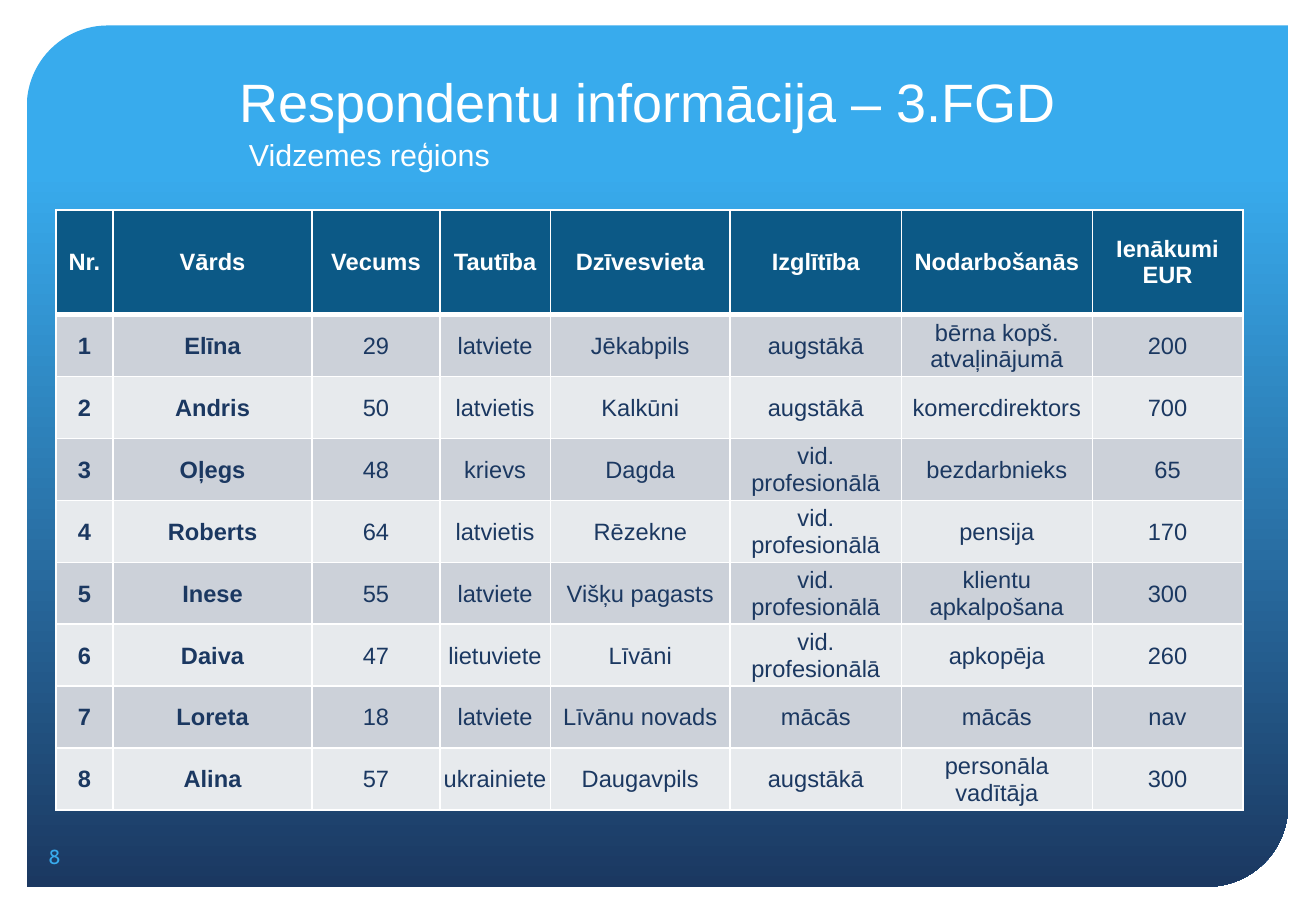
from lxml import etree
from pptx import Presentation
from pptx import util as u
from pptx.dml.color import RGBColor
from pptx.enum import shapes, text
from pptx.oxml import ns

WHITE = RGBColor(0xFF, 0xFF, 0xFF)
SKY = RGBColor(0x38, 0xAB, 0xED)
NAVY = RGBColor(0x1B, 0x38, 0x61)
HEADER = RGBColor(0x0C, 0x59, 0x86)
BANDS = (RGBColor(0xE7, 0xEA, 0xED), RGBColor(0xCC, 0xD1, 0xD9))

COL_WIDTHS = (0.47, 1.64, 1.05, 0.91, 1.48, 1.41, 1.57, 1.24)
HEADER_HEIGHT, ROW_HEIGHT = 0.86, 0.51
RESPONDENTS = (
    ("Nr.", "Vārds", "Vecums", "Tautība", "Dzīvesvieta", "Izglītība", "Nodarbošanās", "Ienākumi EUR"),
    ("1", "Elīna", "29", "latviete", "Jēkabpils", "augstākā", "bērna kopš. atvaļinājumā", "200"),
    ("2", "Andris", "50", "latvietis", "Kalkūni", "augstākā", "komercdirektors", "700"),
    ("3", "Oļegs", "48", "krievs", "Dagda", "vid. profesionālā", "bezdarbnieks", "65"),
    ("4", "Roberts", "64", "latvietis", "Rēzekne", "vid. profesionālā", "pensija", "170"),
    ("5", "Inese", "55", "latviete", "Višķu pagasts", "vid. profesionālā", "klientu apkalpošana", "300"),
    ("6", "Daiva", "47", "lietuviete", "Līvāni", "vid. profesionālā", "apkopēja", "260"),
    ("7", "Loreta", "18", "latviete", "Līvānu novads", "mācās", "mācās", "nav"),
    ("8", "Alina", "57", "ukrainiete", "Daugavpils", "augstākā", "personāla vadītāja", "300"),
)


def write(tf, content, size=14, font="Arial", color=WHITE, bold=False, align=text.PP_ALIGN.LEFT):
    p = tf.paragraphs[0]
    p.alignment = align
    r = p.add_run()
    r.text = content
    r.font.size, r.font.name, r.font.bold = u.Pt(size), font, bold
    r.font.color.rgb = color


def add_borders(cell, **widths):
    tc_pr = cell._tc.get_or_add_tcPr()
    for side in "LRTB":
        ln = etree.SubElement(tc_pr, ns.qn(f"a:ln{side}"), w=str(u.Pt(widths.get(side, 1))))
        solid = etree.SubElement(ln, ns.qn("a:solidFill"))
        etree.SubElement(solid, ns.qn("a:srgbClr"), val=str(WHITE))


class SlideBuilder:
    """Hold the slide style and add each kind of element to the current slide."""

    def __init__(self, slide):
        self.s = slide

    def panel(self, *box):
        sp = self.s.shapes.add_shape(shapes.MSO_SHAPE.ROUND_2_DIAG_RECTANGLE, *map(u.Inches, box))
        sp.adjustments[0], sp.adjustments[1] = 0.094, 0
        sp.shadow.inherit = False
        sp.line.fill.background()
        sp.fill.gradient()
        sp.fill.gradient_angle = 270
        for stop, position, color in zip(sp.fill.gradient_stops, (0.17, 1), (SKY, NAVY)):
            stop.position, stop.color.rgb = position, color
        self.s.shapes.title.element.addprevious(sp.element)

    def title(self, content, *box):
        sp = self.s.shapes.title
        sp.left, sp.top, sp.width, sp.height = map(u.Inches, box)
        tf = sp.text_frame
        tf.auto_size = text.MSO_AUTO_SIZE.NONE
        tf.vertical_anchor = text.MSO_ANCHOR.BOTTOM
        write(tf, content, size=32)

    def label(self, content, *box, wrap=True, **style):
        tf = self.s.shapes.add_textbox(*map(u.Inches, box)).text_frame
        tf.word_wrap = wrap
        write(tf, content, **style)

    def table(self, rows, left, top):
        height = HEADER_HEIGHT + ROW_HEIGHT * (len(rows) - 1)
        box = map(u.Inches, (left, top, sum(COL_WIDTHS), height))
        table = self.s.shapes.add_table(len(rows), len(COL_WIDTHS), *box).table
        for column, width in zip(table.columns, COL_WIDTHS):
            column.width = u.Inches(width)
        for i, row in enumerate(rows):
            table.rows[i].height = u.Inches(ROW_HEIGHT if i else HEADER_HEIGHT)
            for j, content in enumerate(row):
                self.cell(table.cell(i, j), content, i, j)

    def cell(self, cell, content, i, j):
        add_borders(cell, B=1 if i else 3, T=3 if i == 1 else 1)
        cell.fill.solid()
        cell.fill.fore_color.rgb = BANDS[i % 2] if i else HEADER
        cell.vertical_anchor = text.MSO_ANCHOR.MIDDLE
        if i:
            cell.margin_left = cell.margin_right = cell.margin_top = u.Inches(0.01)
            cell.margin_bottom = 0
        write(cell.text_frame, content, color=NAVY if i else WHITE,
              bold=i == 0 or j < 2, align=text.PP_ALIGN.CENTER)


def main():
    prs = Presentation()
    prs.slide_width, prs.slide_height = u.Inches(10.83), u.Inches(7.5)
    b = SlideBuilder(prs.slides.add_slide(prs.slide_layouts[5]))
    b.panel(0.22, 0.21, 10.38, 7.09)
    b.title("Respondentu informācija – 3.FGD", 1.87, 0.36, 7.48, 0.79)
    b.table(RESPONDENTS, 0.46, 1.73)
    b.label("Vidzemes reģions", 1.95, 1.07, 2.29, 0.4, wrap=False, size=18)
    b.label("8", 0.3, 6.9, 0.58, 0.4, size=12, font="Cabin", color=SKY)
    prs.save("out.pptx")


if __name__ == "__main__":
    main()
